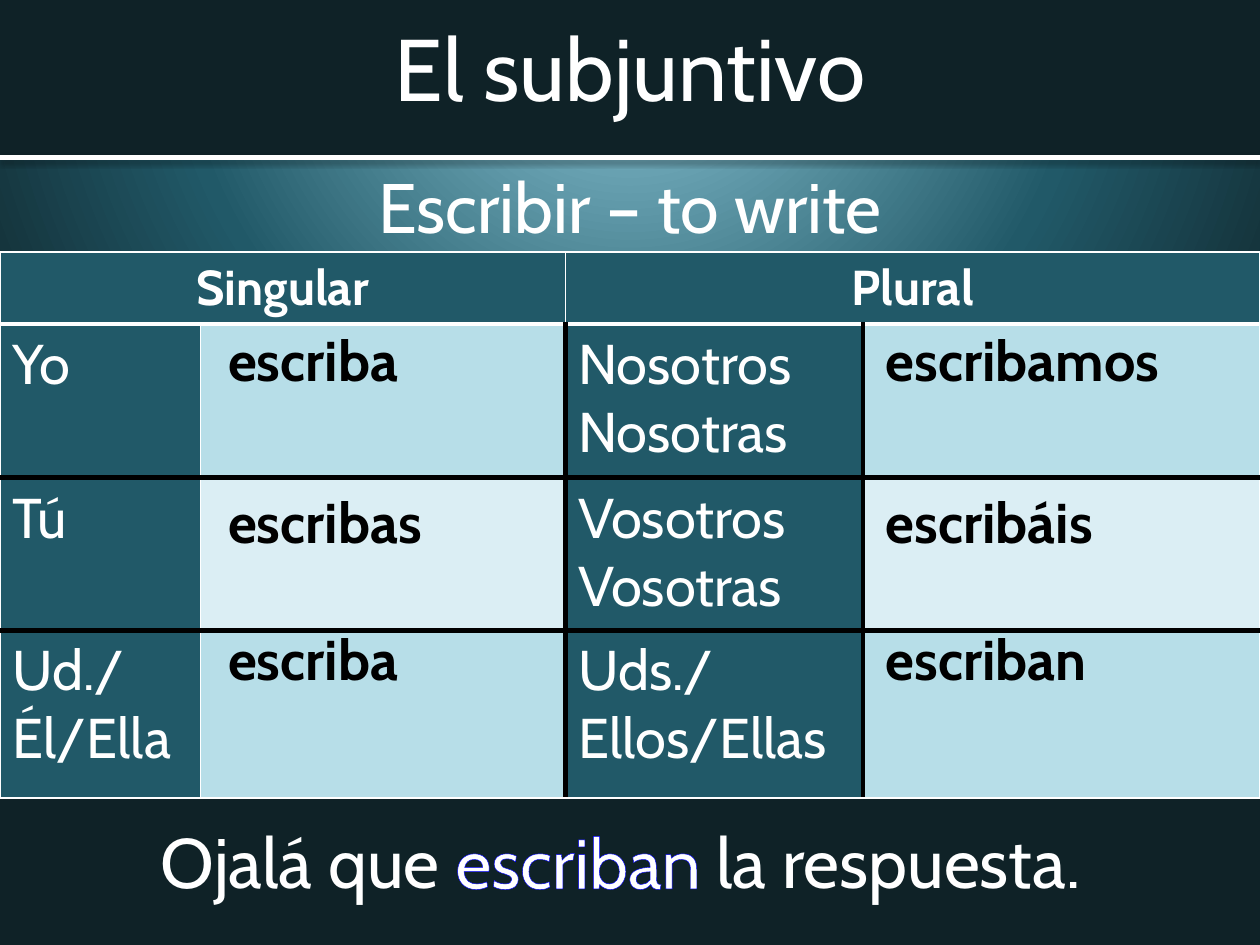
from dataclasses import dataclass

from lxml.etree import SubElement
from pptx import Presentation
from pptx.dml.color import RGBColor
from pptx.enum.shapes import MSO_CONNECTOR, MSO_SHAPE
from pptx.enum.text import MSO_ANCHOR, MSO_AUTO_SIZE, PP_ALIGN
from pptx.oxml import parse_xml
from pptx.oxml.ns import nsdecls, qn
from pptx.util import Inches, Pt


@dataclass(frozen=True)
class Theme:
    """Colours, type sizes and font of the slide."""
    font: str = "Cabin"
    dark: str = "0F2227"
    teal: str = "215968"
    glow: str = "93CDDD"
    band: str = "B7DEE8"
    pale: str = "DBEEF4"
    white: str = "FFFFFF"
    black: str = "000000"
    accent: str = "0000FF"
    title: int = 50
    subtitle: int = 40
    header: int = 28
    cell: int = 32
    thin: int = 1
    thick: int = 3


THEME = Theme()


def write(frame, *lines, size, color=THEME.white, bold=False, align=PP_ALIGN.LEFT):
    """Write one paragraph per line and return the paragraphs; a line may be a list of spans."""
    frame.word_wrap = True
    paras = []
    for index, line in enumerate(lines):
        para = frame.add_paragraph() if index else frame.paragraphs[0]
        para.alignment = align
        for text in [line] if isinstance(line, str) else line:
            span = para.add_run()
            span.text = text
            span.font.name = THEME.font
            span.font.size = Pt(size)
            span.font.bold = bold
            span.font.color.rgb = RGBColor.from_string(color)
        paras.append(para)
    return paras


def place(shape, box):
    """Move a shape to a box given as left, top, width, height in inches."""
    shape.left, shape.top, shape.width, shape.height = map(Inches, box)


def line_xml(tag, color, width):
    """Return a line element, unfilled when there is no colour."""
    fill = f'<a:solidFill><a:srgbClr val="{color}"/></a:solidFill>' if color else "<a:noFill/>"
    return parse_xml(f'<a:{tag} {nsdecls("a")} w="{Pt(width)}">{fill}</a:{tag}>')


def set_borders(cell, left, right, top, bottom):
    """Set the four borders of a cell from pairs of colour and width."""
    properties = cell._tc.get_or_add_tcPr()
    for tag, edge in zip(("lnL", "lnR", "lnT", "lnB"), (left, right, top, bottom)):
        properties.append(line_xml(tag, *edge))


def paint_background(page):
    """Fill the page with a circular gradient centred above the top edge."""
    page.background.fill.solid()
    properties = page.background._cSld.bg.bgPr
    stops = "".join(
        f'<a:gs pos="{position * 1000}"><a:srgbClr val="{color}"/></a:gs>'
        for position, color in ((0, THEME.glow), (58, THEME.teal), (100, THEME.dark)))
    gradient = parse_xml(
        f'<a:gradFill {nsdecls("a")} rotWithShape="1"><a:gsLst>{stops}</a:gsLst>'
        '<a:path path="circle"><a:fillToRect l="50000" t="-80000" r="50000" b="180000"/>'
        '</a:path></a:gradFill>')
    properties.replace(properties[0], gradient)


def add_heading(page, box):
    """Add the title band with its title and lower rule."""
    left, top, width, height = box
    band = page.shapes.add_shape(MSO_SHAPE.RECTANGLE, *map(Inches, box))
    band.shadow.inherit = False
    band.fill.solid()
    band.fill.fore_color.rgb = RGBColor.from_string(THEME.dark)
    band.line.fill.background()
    page.shapes._spTree.insert(2, band._element)

    rule = page.shapes.add_connector(
        MSO_CONNECTOR.STRAIGHT, Inches(left), Inches(top + height),
        Inches(left + width), Inches(top + height))
    rule.line.color.rgb = RGBColor.from_string(THEME.white)
    rule.line.width = Pt(THEME.thick)
    effects = SubElement(rule._element.spPr, qn("a:effectLst"))
    effects.append(parse_xml(
        f'<a:outerShdw {nsdecls("a")} blurRad="{Pt(3.1)}" dist="{Pt(1.6)}" dir="5400000">'
        f'<a:srgbClr val="{THEME.black}"><a:alpha val="38000"/></a:srgbClr></a:outerShdw>'))

    title = page.shapes.title
    place(title, (left, top, width, 1.06))
    title.text_frame.vertical_anchor = MSO_ANCHOR.MIDDLE
    title.text_frame.auto_size = MSO_AUTO_SIZE.NONE
    write(title.text_frame, "El subjuntivo", size=THEME.title, align=PP_ALIGN.CENTER)


def add_verb(page, box):
    """Put the verb and its meaning in the subtitle placeholder."""
    subtitle = page.placeholders[1]
    place(subtitle, box)
    subtitle.text_frame.auto_size = MSO_AUTO_SIZE.NONE
    write(subtitle.text_frame, "Escribir – to write", size=THEME.subtitle, align=PP_ALIGN.CENTER)


def add_pronouns(page, box):
    """Add the conjugation grid with its pronouns."""
    rows = ((("Yo",), ("Nosotros", "Nosotras")),
            (("Tú",), ("Vosotros", "Vosotras")),
            (("Ud./Él/Ella",), ("Uds./Ellos/Ellas",)))
    table = page.shapes.add_table(len(rows) + 1, 4, *map(Inches, box)).table
    for column, width in zip(table.columns, (1.59, 2.9, 2.36, 3.15)):
        column.width = Inches(width)
    for row, height in zip(table.rows, (0.56, 1.22, 1.21, 1.33)):
        row.height = Inches(height)

    thin, rule, heavy = ((THEME.white, THEME.thin), (THEME.white, THEME.thick),
                         (THEME.black, THEME.thick))
    across = (thin, rule, heavy, heavy, thin)
    down = (thin, thin, heavy, heavy, thin)
    for row in range(4):
        sides = down if row else [thin] * 5
        for column in range(4):
            cell = table.cell(row, column)
            set_borders(cell, sides[column], sides[column + 1], across[row], across[row + 1])
            answer = THEME.band if row % 2 else THEME.pale
            cell.fill.solid()
            cell.fill.fore_color.rgb = RGBColor.from_string(
                answer if row and column % 2 else THEME.teal)

    for column, heading in ((0, "Singular"), (2, "Plural")):
        table.cell(0, column).merge(table.cell(0, column + 1))
        write(table.cell(0, column).text_frame, heading, size=THEME.header, bold=True,
              align=PP_ALIGN.CENTER)
        for row, pronouns in enumerate(rows, 1):
            write(table.cell(row, column).text_frame, *pronouns[column // 2], size=THEME.cell)


def add_answer(page, box, verb):
    """Add a one-cell clear table that holds a verb form."""
    table = page.shapes.add_table(1, 1, *map(Inches, box)).table
    table.first_row = table.horz_banding = False
    cell = table.cell(0, 0)
    set_borders(cell, *[(None, THEME.thin)] * 4)
    cell.fill.background()
    write(cell.text_frame, verb, size=THEME.cell, color=THEME.black, bold=True)


def add_example(page, box):
    """Add the example sentence with its verb outlined."""
    frame = page.shapes.add_textbox(*map(Inches, box)).text_frame
    para, = write(frame, ("Ojalá que ", "escriban", " la respuesta."),
                  size=THEME.subtitle, align=PP_ALIGN.CENTER)
    para.runs[1].font._element.insert(0, line_xml("ln", THEME.accent, 0.75))


def main():
    """Build the slide and save it."""
    deck = Presentation()
    deck.slide_width, deck.slide_height = Inches(10), Inches(7.5)
    page = deck.slides.add_slide(deck.slide_layouts[0])
    paint_background(page)
    add_heading(page, (0, 0, 10, 1.25))
    add_verb(page, (0, 1.25, 10, 5.2))
    add_pronouns(page, (0, 2, 10, 4.32))
    answers = ((1.71, 2.46, ("escriba", "escribas", "escriba")),
               (6.93, 2.82, ("escribamos", "escribáis", "escriban")))
    for left, width, verbs in answers:
        for top, verb in zip((2.55, 3.83, 4.92), verbs):
            add_answer(page, (left, top, width, 0.63), verb)
    add_example(page, (0.53, 6.45, 8.79, 0.77))
    deck.save("out.pptx")


if __name__ == "__main__":
    main()
